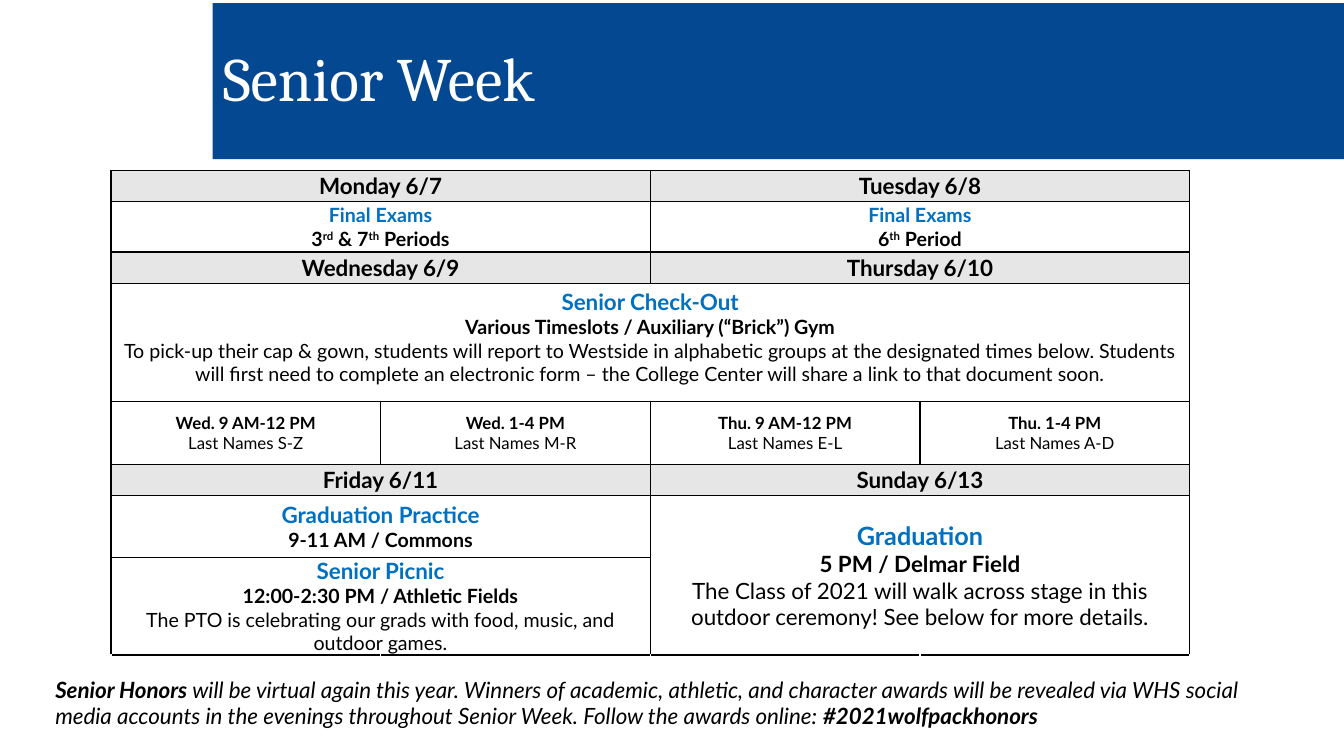
from dataclasses import dataclass
from typing import NamedTuple

from lxml import etree
from pptx import Presentation
from pptx import util as u
from pptx.dml.color import RGBColor
from pptx.enum import text
from pptx.oxml import ns

NAVY = RGBColor(0x03, 0x48, 0x90)
BLUE = RGBColor(0x00, 0x70, 0xC0)
GREY = RGBColor(0xE7, 0xE6, 0xE6)
BLACK = RGBColor(0x00, 0x00, 0x00)
WHITE = RGBColor(0xFF, 0xFF, 0xFF)

COLUMN_COUNT = 4
TABLE_WIDTH = 10.7
ROW_HEIGHTS = [0.31, 0.5, 0.31, 1.17, 0.63, 0.31, 0.61, 0.97, 0.2]
ALL_SIDES = ("L", "R", "T", "B")


class Span(NamedTuple):
    text: str
    bold: bool = True
    raised: bool = False
    italic: bool = False


class Line(NamedTuple):
    spans: list[Span]
    size: float
    color: RGBColor = BLACK


@dataclass
class Entry:
    row: int
    column: int
    lines: list[Line]
    columns: int = 2
    rows: int = 1
    shaded: bool = False
    bottom: float = 0


def heading(words: str, size: float) -> Line:
    return Line([Span(words)], size, BLUE)


def strong(words: str, size: float = 14) -> Line:
    return Line([Span(words)], size)


def plain(words: str, size: float = 14) -> Line:
    return Line([Span(words, bold=False)], size)


def day(row: int, column: int, words: str) -> Entry:
    return Entry(row, column, [strong(words, 16)], shaded=True)


def timeslot(column: int, time: str, names: str) -> Entry:
    return Entry(4, column, [strong(time, 12), plain(f"Last Names {names}", 12)], columns=1)


ENTRIES = [
    day(0, 0, "Monday 6/7"),
    day(0, 2, "Tuesday 6/8"),
    Entry(1, 0, [
        heading("Final Exams", 14),
        Line([Span("3"), Span("rd", raised=True), Span(" & 7"),
              Span("th", raised=True), Span(" Periods")], 14),
    ]),
    Entry(1, 2, [
        heading("Final Exams", 14),
        Line([Span("6"), Span("th", raised=True), Span(" Period")], 14),
    ]),
    day(2, 0, "Wednesday 6/9"),
    day(2, 2, "Thursday 6/10"),
    Entry(3, 0, [
        heading("Senior Check-Out", 16),
        strong("Various Timeslots / Auxiliary (“Brick”) Gym"),
        plain("To pick-up their cap & gown, students will report to Westside in "
              "alphabetic groups at the designated times below. Students will first "
              "need to complete an electronic form – the College Center will share a "
              "link to that document soon."),
    ], columns=4, bottom=0.1),
    timeslot(0, "Wed. 9 AM-12 PM", "S-Z"),
    timeslot(1, "Wed. 1-4 PM", "M-R"),
    timeslot(2, "Thu. 9 AM-12 PM", "E-L"),
    timeslot(3, "Thu. 1-4 PM", "A-D"),
    day(5, 0, "Friday 6/11"),
    day(5, 2, "Sunday 6/13"),
    Entry(6, 0, [heading("Graduation Practice", 16), strong("9-11 AM / Commons")]),
    Entry(6, 2, [
        heading("Graduation", 18),
        strong("5 PM / Delmar Field", 16),
        plain("The Class of 2021 will walk across stage in this outdoor ceremony! "
              "See below for more details.", 16),
    ], rows=2),
    Entry(7, 0, [
        heading("Senior Picnic", 16),
        strong("12:00-2:30 PM / Athletic Fields"),
        plain("The PTO is celebrating our grads with food, music, and outdoor games."),
    ]),
]

HONORS = Line([
    Span("Senior Honors ", italic=True),
    Span("will be virtual again this year. Winners of academic, athletic, and "
         "character awards will be revealed via WHS social media accounts in the "
         "evenings throughout Senior Week. Follow the awards online: ",
         bold=False, italic=True),
    Span("#2021wolfpackhonors", italic=True),
], 16)


def apply(target, formats: dict) -> None:
    for name, value in formats.items():
        setattr(target, name, value)


def write_lines(frame, lines: list[Line], alignment) -> None:
    for index, line in enumerate(lines):
        para = frame.add_paragraph() if index else frame.paragraphs[0]
        para.alignment = alignment
        for span in line.spans:
            run = para.add_run()
            run.text = span.text
            apply(run.font, {"name": "Lato", "size": u.Pt(line.size),
                             "bold": span.bold, "italic": span.italic})
            run.font.color.rgb = line.color
            if span.raised:
                run._r.get_or_add_rPr().set("baseline", "30000")


def add_borders(cell, sides: tuple[str, ...]) -> None:
    properties = cell._tc.get_or_add_tcPr()
    for side in sides:
        border = etree.SubElement(properties, ns.qn(f"a:ln{side}"), w=str(u.Pt(1)))
        fill = etree.SubElement(border, ns.qn("a:solidFill"))
        etree.SubElement(fill, ns.qn("a:srgbClr"), val=str(BLACK))


def add_title(page) -> None:
    title = page.shapes.title
    apply(title, {"left": u.Inches(2.11), "top": u.Inches(0.03),
                  "width": u.Inches(11.22), "height": u.Inches(1.55)})
    title.fill.solid()
    title.fill.fore_color.rgb = NAVY
    frame = title.text_frame
    frame.text = "Senior Week"
    apply(frame, {"vertical_anchor": text.MSO_ANCHOR.MIDDLE, "word_wrap": True,
                  "auto_size": text.MSO_AUTO_SIZE.NONE})
    para = frame.paragraphs[0]
    apply(para, {"alignment": text.PP_ALIGN.LEFT, "line_spacing": 0.9})
    font = para.runs[0].font
    apply(font, {"name": "Cambria", "size": u.Pt(44)})
    font.color.rgb = WHITE


def add_schedule(page) -> None:
    table = page.shapes.add_table(
        len(ROW_HEIGHTS), COLUMN_COUNT, u.Inches(1.1), u.Inches(1.69),
        u.Inches(TABLE_WIDTH), u.Inches(sum(ROW_HEIGHTS))).table
    apply(table, {"first_row": False, "horz_banding": False})
    for column in table.columns:
        column.width = u.Inches(TABLE_WIDTH / COLUMN_COUNT)
    for row, height in zip(table.rows, ROW_HEIGHTS):
        row.height = u.Inches(height)
    for entry in ENTRIES:
        cell = table.cell(entry.row, entry.column)
        if entry.rows * entry.columns > 1:
            cell.merge(table.cell(entry.row + entry.rows - 1,
                                  entry.column + entry.columns - 1))
        add_borders(cell, ALL_SIDES)
        write_lines(cell.text_frame, entry.lines, text.PP_ALIGN.CENTER)
    for column in range(COLUMN_COUNT):
        add_borders(table.cell(len(ROW_HEIGHTS) - 1, column), ("T",))
    for cell in table.iter_cells():
        apply(cell, {"margin_left": u.Inches(0.07), "margin_right": u.Inches(0.07),
                     "margin_top": 0, "margin_bottom": 0,
                     "vertical_anchor": text.MSO_ANCHOR.MIDDLE})
        cell.fill.background()
    for entry in ENTRIES:
        cell = table.cell(entry.row, entry.column)
        cell.margin_bottom = u.Inches(entry.bottom)
        if entry.shaded:
            cell.fill.solid()
            cell.fill.fore_color.rgb = GREY


def add_honors(page) -> None:
    box = page.shapes.add_textbox(u.Inches(0.45), u.Inches(6.65),
                                  u.Inches(12.17), u.Inches(0.64))
    apply(box.text_frame, {"word_wrap": True, "vertical_anchor": text.MSO_ANCHOR.MIDDLE,
                           "auto_size": text.MSO_AUTO_SIZE.SHAPE_TO_FIT_TEXT})
    write_lines(box.text_frame, [HONORS], text.PP_ALIGN.LEFT)


def main() -> None:
    deck = Presentation()
    apply(deck, {"slide_width": u.Inches(13.33), "slide_height": u.Inches(7.5)})
    page = deck.slides.add_slide(deck.slide_layouts[5])
    add_title(page)
    add_schedule(page)
    add_honors(page)
    deck.save("out.pptx")


if __name__ == "__main__":
    main()
